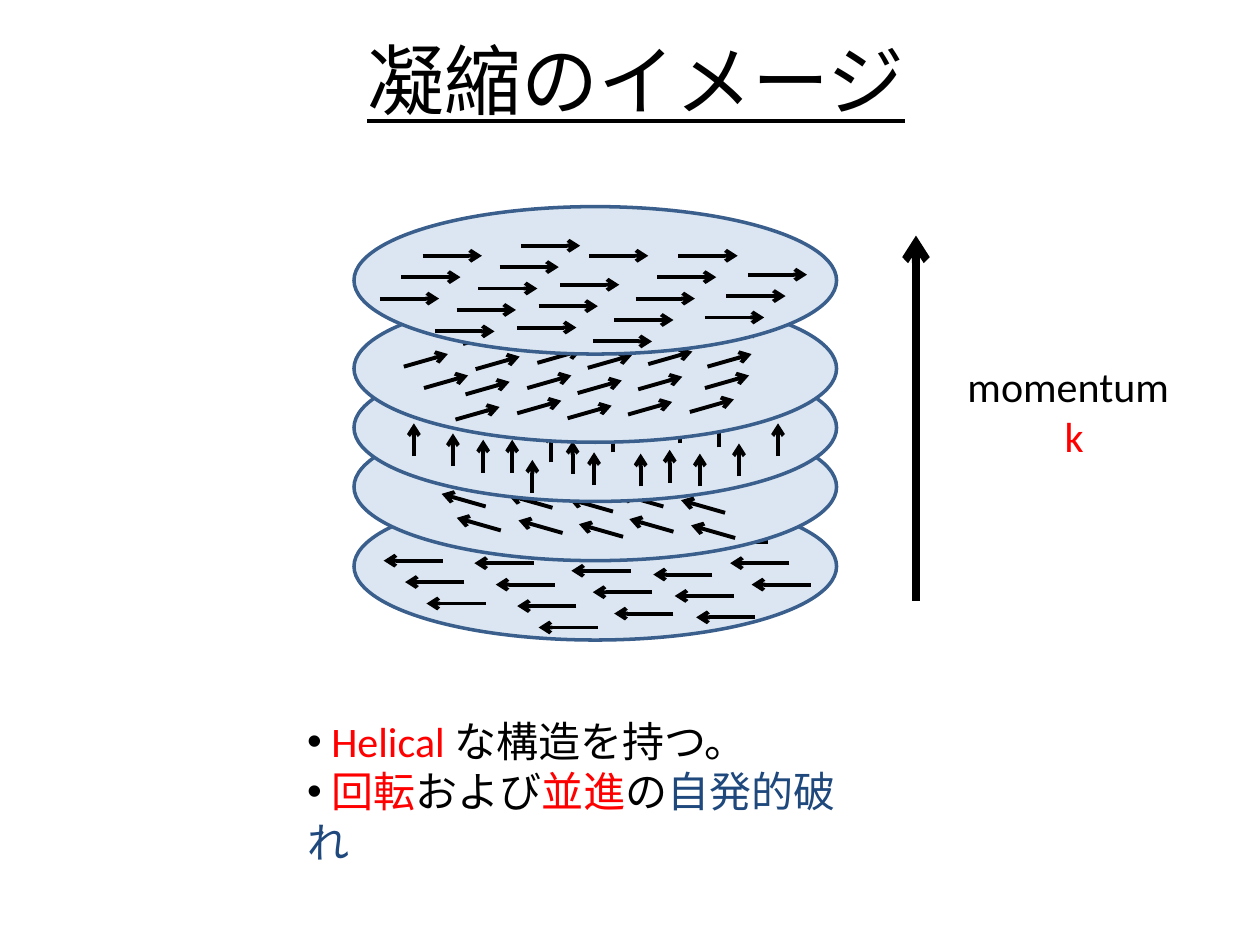
from lxml import etree
from pptx import Presentation
from pptx.dml.color import RGBColor
from pptx.enum.shapes import MSO_CONNECTOR, MSO_SHAPE
from pptx.enum.text import MSO_ANCHOR, PP_ALIGN
from pptx.oxml.ns import qn
from pptx.util import Inches, Pt

BLACK = RGBColor(0x00, 0x00, 0x00)
RED = RGBColor(0xFF, 0x00, 0x00)
NAVY = RGBColor(0x1F, 0x49, 0x7D)
PALE = RGBColor(0xDC, 0xE6, 0xF2)
EDGE = RGBColor(0x3A, 0x5F, 0x8C)
OVAL = MSO_SHAPE.OVAL
LINE = MSO_CONNECTOR.STRAIGHT
TOP, MIDDLE = MSO_ANCHOR.TOP, MSO_ANCHOR.MIDDLE
LEFT, CENTER = PP_ALIGN.LEFT, PP_ALIGN.CENTER

# Each row: x from the disc's centre, y from its top, number of arrows
FLAT = {
    "vec": (-0.47, 0), "step": (0.17, 0.17),
    "rows": [(0.28, 0.62, 3), (0.59, 0.31, 5), (0.05, 0.39, 1),
             (-0.66, 0.39, 5), (-1.21, 0.54, 3), (1.37, 0.39, 3)],
}
TILT = {
    "vec": (-0.35, -0.1), "step": (0.08, 0.2),
    "rows": [(0.06, 0.58, 3), (0.38, 0.34, 4), (1.05, 0.39, 1),
             (-0.06, 0.3, 1), (-0.75, 0.93, 1), (-0.5, 0.35, 4),
             (-0.87, 0.74, 1), (-0.97, 0.37, 2), (0.95, 0.59, 3)],
}
WIDE = {**TILT, "rows": TILT["rows"] + [(1.52, 0.57, 1), (1.36, 0.74, 1)]}
UP = {
    "vec": (0, -0.26), "step": (0.17, 0.09),
    "rows": [(-0.03, 0.69, 2), (0.36, 1.05, 1), (-0.35, 0.86, 3),
             (1.14, 0.97, 1), (-1.13, 0.89, 1), (-0.66, 0.94, 1),
             (0.67, 0.71, 1), (0.98, 0.74, 1), (-0.27, 0.58, 1),
             (0.4, 0.53, 1), (-0.74, 0.55, 1), (-0.5, 0.55, 1),
             (0.83, 1.05, 1), (-0.5, 1.1, 1), (-0.89, 0.94, 1),
             (0.59, 1.02, 1), (-1.44, 0.81, 1), (1.45, 0.81, 1)],
}
# Disc top, arrow pattern, side (-1 mirrors the pattern), from back to front
DISCS = [(3.91, FLAT, 1), (3.28, TILT, 1), (2.81, UP, 1),
         (2.34, WIDE, -1), (1.64, FLAT, -1)]


def add_arrow(slide, start, end, width):
    ends = [Inches(v) for v in (*start, *end)]
    arrow = slide.shapes.add_connector(LINE, *ends)
    arrow.line.color.rgb = BLACK
    arrow.line.width = Pt(width)
    etree.SubElement(arrow.line._get_or_add_ln(), qn("a:tailEnd"), type="arrow")
    etree.SubElement(arrow._element.spPr, qn("a:effectLst"))


def add_disc(slide, box, pattern, side):
    left, top, width, height = box
    disc = slide.shapes.add_shape(OVAL, *[Inches(v) for v in box])
    disc.shadow.inherit = False
    disc.fill.solid()
    disc.fill.fore_color.rgb = PALE
    disc.line.color.rgb = EDGE
    disc.line.width = Pt(2)

    mid = left + width / 2
    (dx, dy), (gap, drop) = pattern["vec"], pattern["step"]
    for across, down, count in pattern["rows"]:
        for i in range(count):
            x = mid + side * (across + i * gap)
            y = top + down + i * drop
            add_arrow(slide, (x, y), (x + side * dx, y + dy), 2.25)


def add_stack(slide, left, width, height):
    for top, pattern, side in DISCS:
        add_disc(slide, (left, top, width, height), pattern, side)


def add_text(slide, box, lines, size, anchor=TOP, wrap=True, line=False, bullet=False):
    """Each line is an alignment and a list of (text, colour) runs."""
    frame = slide.shapes.add_textbox(*[Inches(v) for v in box]).text_frame
    frame.word_wrap = wrap
    frame.vertical_anchor = anchor
    for i, (align, runs) in enumerate(lines):
        para = frame.paragraphs[0] if i == 0 else frame.add_paragraph()
        para.alignment = align
        if bullet:
            props = para._p.get_or_add_pPr()
            etree.SubElement(props, qn("a:buFont"), typeface="Arial")
            etree.SubElement(props, qn("a:buChar"), char="•")
        for text, color in runs:
            run = para.add_run()
            run.text = text
            form = {"name": "Calibri", "size": Pt(size), "underline": line}
            for key, value in form.items():
                setattr(run.font, key, value)
            run.font.color.rgb = color


def add_axis(slide, box):
    """Draws the upward arrow at the left of the box and its label beside it."""
    left, top, width, height = box
    add_arrow(slide, (left, top + height), (left, top), 4.5)
    label = (left + 0.31, top + 0.94, width - 0.31, 0.91)
    lines = [(LEFT, [("momentum", BLACK)]), (CENTER, [("k", RED)])]
    add_text(slide, label, lines, 24)


def add_notes(slide, box):
    lines = [
        (LEFT, [(" ", BLACK), ("Helical ", RED), ("な構造を持つ。", BLACK)]),
        (LEFT, [(" ", BLACK), ("回転", RED), ("および", BLACK), ("並進", RED),
                ("の", BLACK), ("自発的破れ", NAVY)]),
    ]
    add_text(slide, box, lines, 24, bullet=True)


def main():
    deck = Presentation()
    deck.slide_width, deck.slide_height = Inches(10), Inches(7.5)
    slide = deck.slides.add_slide(deck.slide_layouts[6])
    title = [(CENTER, [("凝縮のイメージ", BLACK)])]
    add_text(slide, (0.55, 0, 9, 1.25), title, 44, anchor=MIDDLE, line=True)
    add_stack(slide, 2.81, 3.83, 1.17)
    add_axis(slide, (7.27, 1.87, 2.2, 2.9))
    add_notes(slide, (2.34, 5.63, 4.7, 0.91))
    deck.save("out.pptx")


if __name__ == "__main__":
    main()
